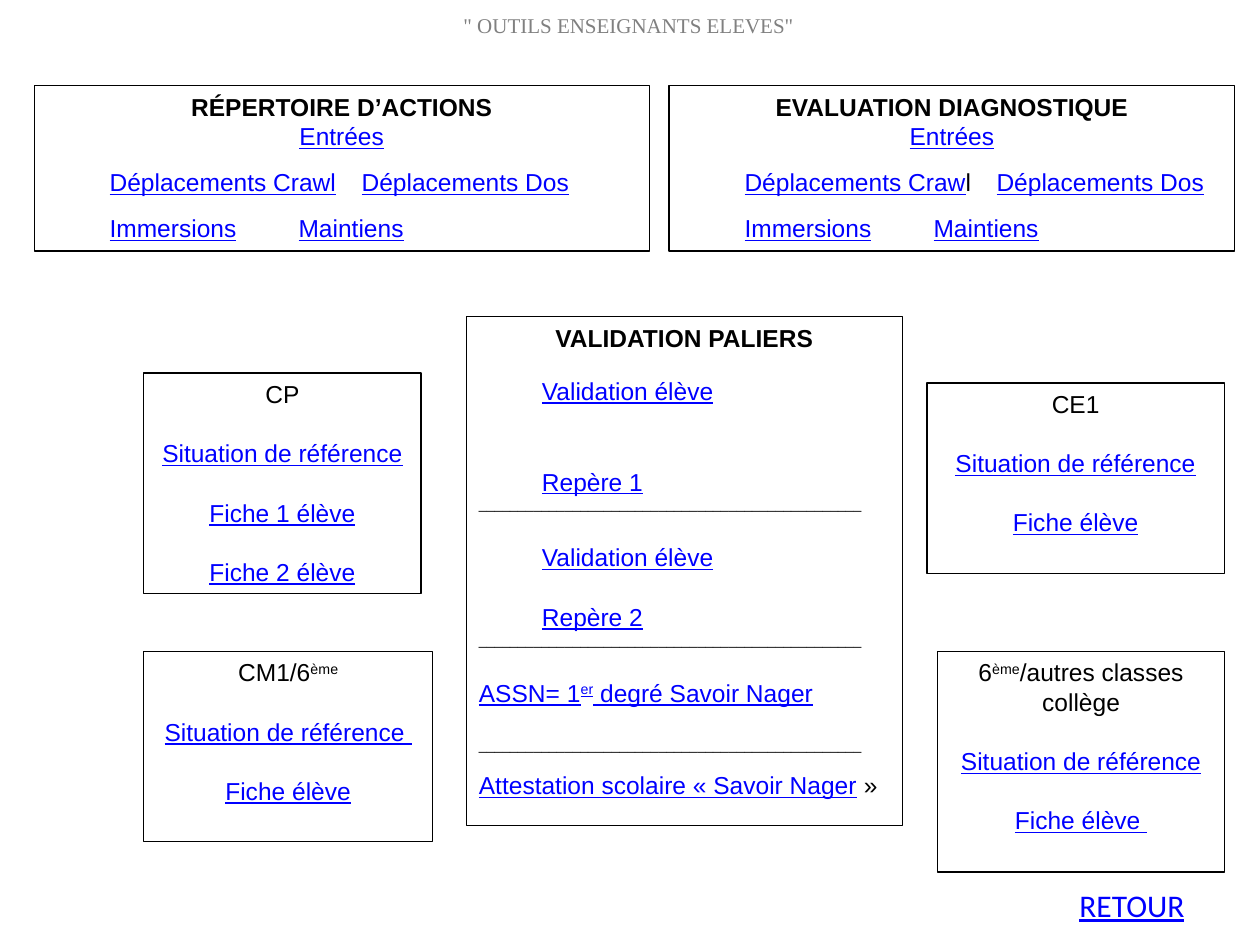
"""Build the slide of teacher and pupil tools."""
from dataclasses import dataclass

from lxml import etree
from pptx import Presentation
from pptx.dml.color import RGBColor
from pptx.enum.shapes import MSO_SHAPE
from pptx.enum.text import MSO_ANCHOR, MSO_AUTO_SIZE, PP_ALIGN
from pptx.oxml.ns import qn
from pptx.util import Cm, Pt

RECT = MSO_SHAPE.RECTANGLE
TOP = MSO_ANCHOR.TOP
FIXED = MSO_AUTO_SIZE.NONE
LEFT, MID = PP_ALIGN.LEFT, PP_ALIGN.CENTER

BLACK, BLUE, GREY = "000000", "0000FF", "808080"
GAP, SMALL = 17, 9.5
RULE = "_" * 49

BASE = {"size": Pt(14), "name": "Arial", "bold": False, "underline": False}
LOOKS = {
    "plain": (BLACK, BASE),
    "head": (BLACK, BASE | {"bold": True}),
    "link": (BLUE, BASE | {"underline": True}),
    "rule": (BLACK, BASE | {"size": Pt(8)}),
    "title": (GREY, BASE | {"size": Pt(12), "name": "Times New Roman"}),
    "back": (BLUE, BASE | {"size": Pt(18), "name": "Calibri", "underline": True}),
}


@dataclass
class Bit:
    """A run of text with its look."""
    text: str
    look: str = "link"
    sup: bool = False


@dataclass
class Line:
    """A paragraph with the space above it and its tab stops in cm."""
    bits: list[Bit]
    gap: float = 0
    align: PP_ALIGN = MID
    tabs: tuple[float, ...] = ()


@dataclass
class Box:
    """A framed box placed in cm."""
    area: tuple[float, float, float, float]
    lines: list[Line]


def paint(font, hue: str) -> None:
    """Colour a font from a hex string."""
    font.color.rgb = RGBColor.from_string(hue)


def place(shape, area: tuple[float, ...]) -> None:
    """Move and size a shape."""
    for name, size in zip(("left", "top", "width", "height"), area):
        setattr(shape, name, Cm(size))


def frame(shape) -> None:
    """Give a shape a thin black outline."""
    shape.line.color.rgb = RGBColor.from_string(BLACK)
    shape.line.width = Pt(0.75)


def add_bit(para, bit: Bit) -> None:
    """Add one run to a paragraph."""
    run = para.add_run()
    run.text = bit.text
    hue, looks = LOOKS[bit.look]
    for name, value in looks.items():
        setattr(run.font, name, value)
    paint(run.font, hue)
    if bit.sup:
        run.font._element.set("baseline", "30000")


def write(shape, lines: list[Line]) -> None:
    """Fill a shape with lines of text."""
    text = shape.text_frame
    text.word_wrap = True
    text.auto_size = FIXED
    text.vertical_anchor = TOP
    for num, line in enumerate(lines):
        para = text.add_paragraph() if num else text.paragraphs[0]
        para.alignment = line.align
        para.space_before = Pt(line.gap)
        props = para._p.get_or_add_pPr()
        props.set("marL", "0")
        props.set("indent", "0")
        etree.SubElement(props, qn("a:buNone"))
        if line.tabs:
            stops = etree.SubElement(props, qn("a:tabLst"))
            for stop in line.tabs:
                etree.SubElement(stops, qn("a:tab"), pos=str(Cm(stop)), algn="l")
        for bit in line.bits:
            add_bit(para, bit)


def draw(slide, box: Box) -> None:
    """Draw a framed box with its text."""
    shape = slide.shapes.add_shape(RECT, *map(Cm, box.area))
    shape.shadow.inherit = False
    shape.fill.background()
    frame(shape)
    write(shape, box.lines)


def level(head: list[Bit], *links: str) -> list[Line]:
    """List the links of one class level."""
    return [Line(head)] + [Line([Bit(link)], GAP) for link in links]


def pair(one: list[Bit], two: str, tabs: tuple[float, float]) -> Line:
    """Set two links side by side on tab stops."""
    return Line([Bit("\t", "plain"), *one, Bit("\t", "plain"), Bit(two)],
                SMALL, LEFT, tabs)


def skills(head: str, crawl: list[Bit], wide: tuple, near: tuple) -> list[Line]:
    """List the links of one group of skills."""
    return [
        Line([Bit(head, "head")]),
        Line([Bit("Entrées")]),
        pair(crawl, "Déplacements Dos", wide),
        pair([Bit("Immersions")], "Maintiens", near),
    ]


def step(text: str, gap: float) -> Line:
    """Set an indented link."""
    return Line([Bit("\t", "plain"), Bit(text)], gap, LEFT, (2.54,))


def rule(gap: float = 0) -> Line:
    """Set a line of underscores."""
    return Line([Bit(RULE, "rule")], gap, LEFT)


REF, CARD = "Situation de référence", "Fiche élève"
BOXES = [
    Box((2.9, 7.52, 5.59, 4.45),
        level([Bit("CP", "plain")], REF, "Fiche 1 élève", "Fiche 2 élève")),
    Box((18.69, 7.72, 5.99, 3.84), level([Bit("CE1", "plain")], REF, CARD)),
    Box((2.9, 13.13, 5.82, 3.84),
        level([Bit("CM1/6", "plain"), Bit("ème", "plain", True)], REF + " ", CARD)),
    Box((18.9, 13.13, 5.79, 4.45),
        level([Bit("6", "plain"), Bit("ème", "plain", True),
               Bit("/autres classes collège", "plain")], REF, CARD + " ")),
    Box((0.69, 1.73, 12.4, 3.33),
        skills("RÉPERTOIRE D’ACTIONS", [Bit("Déplacements Crawl")],
               (0.21, 7.52), (2.65, 7.14))),
    Box((13.49, 1.73, 11.4, 3.33),
        skills("EVALUATION DIAGNOSTIQUE",
               [Bit("Déplacements Craw"), Bit("l", "plain")],
               (0.05, 6.68), (2.37, 6.44))),
]
STAGES = [
    Line([Bit("VALIDATION PALIERS", "head")]),
    step("Validation élève", 13.5),
    step("Repère 1", 35),
    rule(),
    step("Validation élève", GAP),
    step("Repère 2", GAP),
    rule(),
    Line([Bit("ASSN= 1"), Bit("er", sup=True), Bit(" degré Savoir Nager")], GAP, LEFT),
    rule(GAP),
    Line([Bit("Attestation scolaire « Savoir Nager"), Bit(" »", "plain")], SMALL, LEFT),
]


def main() -> None:
    """Build and save the slide."""
    deck = Presentation()
    deck.slide_width, deck.slide_height = Cm(25.4), Cm(19.05)
    slide = deck.slides.add_slide(deck.slide_layouts[1])
    title, body = slide.placeholders
    place(title, (1.09, 0, 22.86, 1.6))
    write(title, [Line([Bit('" OUTILS ENSEIGNANTS ELEVES"', "title")])])
    title.text_frame.margin_top = Cm(0.25)
    title.text_frame.margin_left = Cm(0.56)
    place(body, (9.4, 6.38, 8.79, 10.26))
    frame(body)
    write(body, STAGES)
    for box in BOXES:
        draw(slide, box)
    back = slide.shapes.add_textbox(*map(Cm, (21.51, 17.73, 3.45, 1.02)))
    write(back, [Line([Bit("RETOUR", "back")], align=LEFT)])
    deck.save("out.pptx")


if __name__ == "__main__":
    main()
